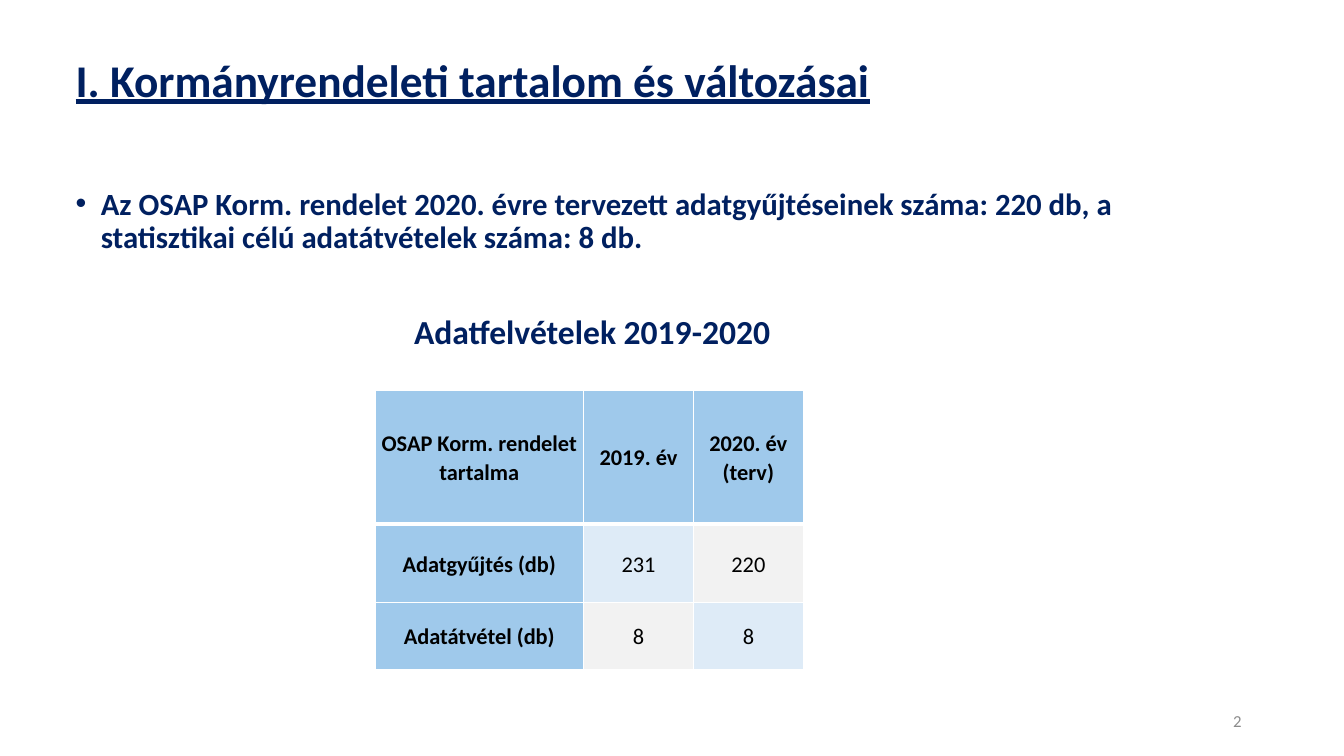
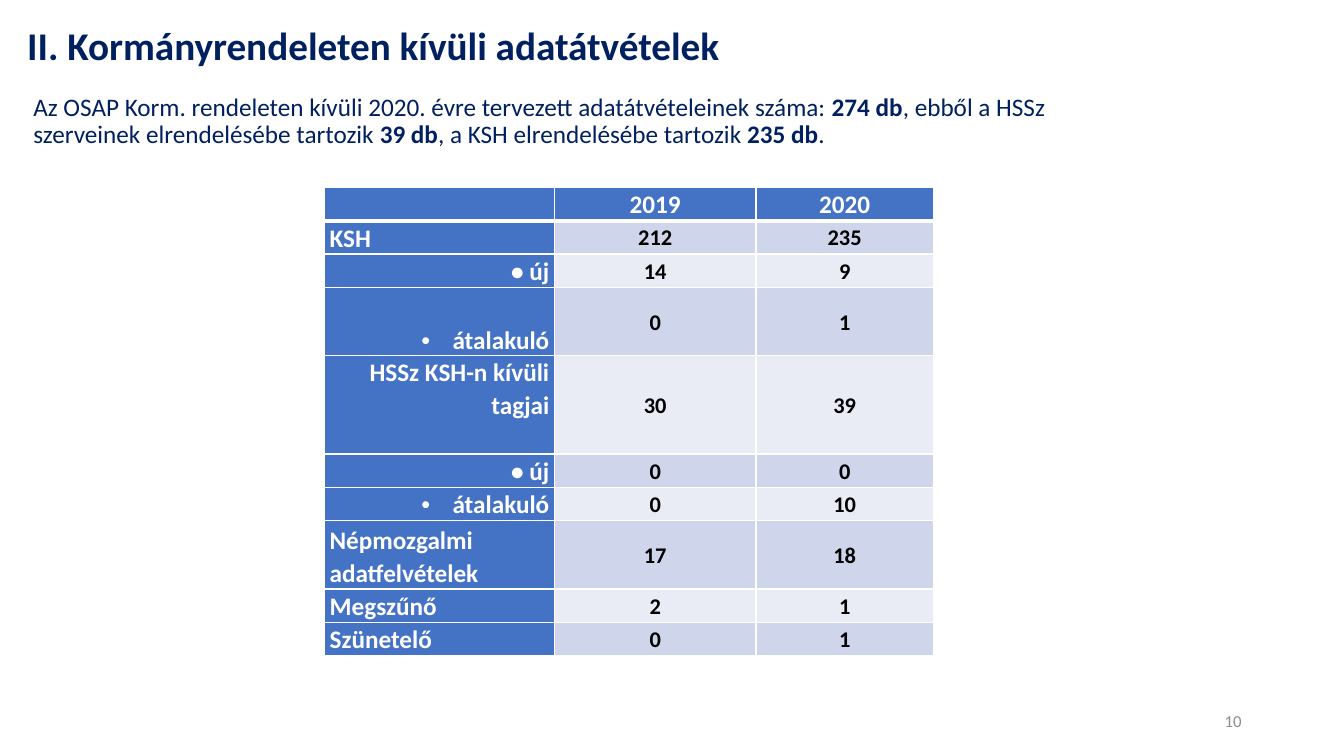
import pptx
import pptx.dml.color
import pptx.enum.text
import pptx.oxml
import pptx.oxml.ns
import pptx.util

ALIGN = pptx.enum.text.PP_ALIGN
ANCHOR = pptx.enum.text.MSO_ANCHOR
NAVY, WHITE, BLACK, GREY = "002060", "FFFFFF", "000000", "8C8C8C"
SKY, BLUE = "9FC9EB", "4472C4"
NAMESPACE = pptx.oxml.ns.nsdecls("a")


def colour(value):
    return pptx.dml.color.RGBColor.from_string(value)


def write(frame, text, size=18, color=NAVY, bold=False, underline=False, align=ALIGN.LEFT,
          anchor=ANCHOR.TOP, spacing=0.9, bullet=False, margin=0, hang=0):
    frame.word_wrap = True
    frame.auto_size = pptx.enum.text.MSO_AUTO_SIZE.NONE
    frame.vertical_anchor = anchor
    para = frame.paragraphs[0]
    properties = para._p.get_or_add_pPr()
    properties.set("marL", str(pptx.util.Inches(margin)))
    properties.set("indent", str(pptx.util.Inches(-hang)))
    if bullet:
        properties.append(pptx.oxml.parse_xml(f'<a:buFont {NAMESPACE} typeface="Arial"/>'))
        properties.append(pptx.oxml.parse_xml(f'<a:buChar {NAMESPACE} char="•"/>'))
    else:
        properties.append(pptx.oxml.parse_xml(f"<a:buNone {NAMESPACE}/>"))
    para.alignment = align
    para.line_spacing = spacing
    para.space_before = pptx.util.Pt(0)
    for index, part in enumerate(text.split("|")):
        if part:
            span = para.add_run()
            span.text = part
            span.font.name = "Calibri"
            span.font.size = pptx.util.Pt(size)
            span.font.bold = bold != (index % 2 == 1)
            span.font.underline = underline
            span.font.color.rgb = colour(color)


deck = pptx.Presentation()
deck.slide_width = pptx.util.Inches(13.333)
deck.slide_height = pptx.util.Inches(7.5)
unit = deck.slide_width / 80

centred = dict(align=ALIGN.CENTER, anchor=ANCHOR.MIDDLE)
main_label = dict(anchor=ANCHOR.BOTTOM)
sub_label = dict(align=ALIGN.RIGHT, anchor=ANCHOR.BOTTOM)
bullet_label = dict(sub_label, bullet=True, hang=0.31)
top_label = dict(align=ALIGN.RIGHT)

pages = [
    dict(
        number="2",
        title="I. Kormányrendeleti tartalom és változásai",
        title_place=(3.9, 2.9, 60, 4),
        title_format=dict(size=32.4, underline=True),
        body="Az OSAP Korm. rendelet 2020. évre tervezett adatgyűjtéseinek száma: 220 db, "
             "a statisztikai célú adatátvételek száma: 8 db.",
        body_place=(3.9, 10.92, 70.6, 5),
        body_format=dict(size=22, bold=True, bullet=True, margin=0.25, hang=0.25),
        caption="Adatfelvételek 2019-2020",
        table_place=(22.32, 23.22),
        columns=(12.42, 6.54, 6.54),
        head_fill=SKY, stripes=("DEEBF7", "F2F2F2"), checker=1,
        head_format=dict(centred, size=16, color=BLACK, bold=True),
        label_format=dict(size=16, color=BLACK, bold=True),
        value_format=dict(centred, size=16, color=BLACK),
        rows=[
            (7.98, centred, "OSAP Korm. rendelet tartalma", "2019. év", "2020. év (terv)"),
            (4.68, centred, "Adatgyűjtés (db)", "231", "220"),
            (3.96, centred, "Adatátvétel (db)", "8", "8"),
        ],
    ),
    dict(
        number="10",
        title="II. Kormányrendeleten kívüli adatátvételek",
        title_place=(1.02, 0.96, 50, 3.72),
        title_format=dict(size=28),
        body="Az OSAP Korm. rendeleten kívüli 2020. évre tervezett adatátvételeinek száma: "
             "|274 db|, ebből a HSSz szerveinek elrendelésébe tartozik |39 db|, "
             "a KSH elrendelésébe tartozik |235 db|.",
        body_place=(1.38, 5.34, 64.62, 4),
        body_format=dict(size=18),
        caption="",
        table_place=(19.32, 11.16),
        columns=(13.68, 12, 10.56),
        head_fill=BLUE, stripes=("E9EBF5", "CFD5EA"), checker=0,
        head_format=dict(centred, anchor=ANCHOR.BOTTOM, color=WHITE, bold=True),
        label_format=dict(color=WHITE, bold=True),
        value_format=dict(centred, size=16, color=BLACK, bold=True),
        rows=[
            (1.98, main_label, "", "2019", "2020"),
            (1.98, main_label, "KSH", "212", "235"),
            (1.98, sub_label, "• új", "14", "9"),
            (4.08, bullet_label, "átalakuló", "0", "1"),
            (5.85, top_label, "HSSz KSH-n kívüli tagjai", "30", "39"),
            (1.98, sub_label, "• új", "0", "0"),
            (1.98, bullet_label, "átalakuló", "0", "10"),
            (4.08, main_label, "Népmozgalmi adatfelvételek", "17", "18"),
            (1.98, main_label, "Megszűnő", "2", "1"),
            (1.98, main_label, "Szünetelő", "0", "1"),
        ],
    ),
]

for content in pages:
    page = deck.slides.add_slide(deck.slide_layouts[1])
    number_box = page.shapes.add_textbox(0, 0, 0, 0)
    boxes = [
        (page.shapes.title, content["title_place"], content["title"],
         dict(content["title_format"], bold=True, anchor=ANCHOR.MIDDLE)),
        (page.placeholders[1], content["body_place"], content["body"], content["body_format"]),
        (number_box, (56.5, 41.7, 18, 2.4), content["number"],
         dict(size=12, color=GREY, align=ALIGN.RIGHT, anchor=ANCHOR.MIDDLE, spacing=1)),
    ]
    if content["caption"]:
        caption_box = page.shapes.add_textbox(0, 0, 0, 0)
        boxes.append((caption_box, (23.4, 18.24, 23.7, 3), content["caption"],
                      dict(size=24, bold=True, align=ALIGN.CENTER, spacing=1)))
    for box, place, text, style in boxes:
        box.left, box.top, box.width, box.height = (int(unit * share) for share in place)
        write(box.text_frame, text, **style)

    rows, columns = content["rows"], content["columns"]
    left, top = content["table_place"]
    size = (left, top, sum(columns), sum(row[0] for row in rows))
    table = page.shapes.add_table(len(rows), len(columns), *(int(unit * share) for share in size)).table
    table.first_row = table.horz_banding = False
    for column, width in zip(table.columns, columns):
        column.width = int(unit * width)
    for row_index, (height, label_place, *texts) in enumerate(rows):
        table.rows[row_index].height = int(unit * height)
        for column_index, text in enumerate(texts):
            cell = table.cell(row_index, column_index)
            cell.margin_left = cell.margin_right = pptx.util.Inches(0.05)
            cell.margin_top = cell.margin_bottom = 0
            if column_index == 0:
                style = dict(content["label_format"], **label_place)
            elif row_index == 0:
                style = content["head_format"]
            else:
                style = content["value_format"]
            write(cell.text_frame, text, **dict(style, spacing=1.07))
            cell.vertical_anchor = style.get("anchor", ANCHOR.TOP)
            stripe = content["stripes"][(row_index + column_index * content["checker"]) % 2]
            cell.fill.solid()
            cell.fill.fore_color.rgb = colour(content["head_fill"] if 0 in (row_index, column_index) else stripe)
            sides = ("L", "R", "T", "B") if row_index == 0 else ("L", "R", "B")
            for position, side in enumerate(sides):
                thickness = pptx.util.Pt(3 if row_index == 0 and side == "B" else 1)
                cell._tc.tcPr.insert(position, pptx.oxml.parse_xml(
                    f'<a:ln{side} {NAMESPACE} w="{thickness}"><a:solidFill>'
                    f'<a:srgbClr val="{WHITE}"/></a:solidFill></a:ln{side}>'))

deck.save("out.pptx")
